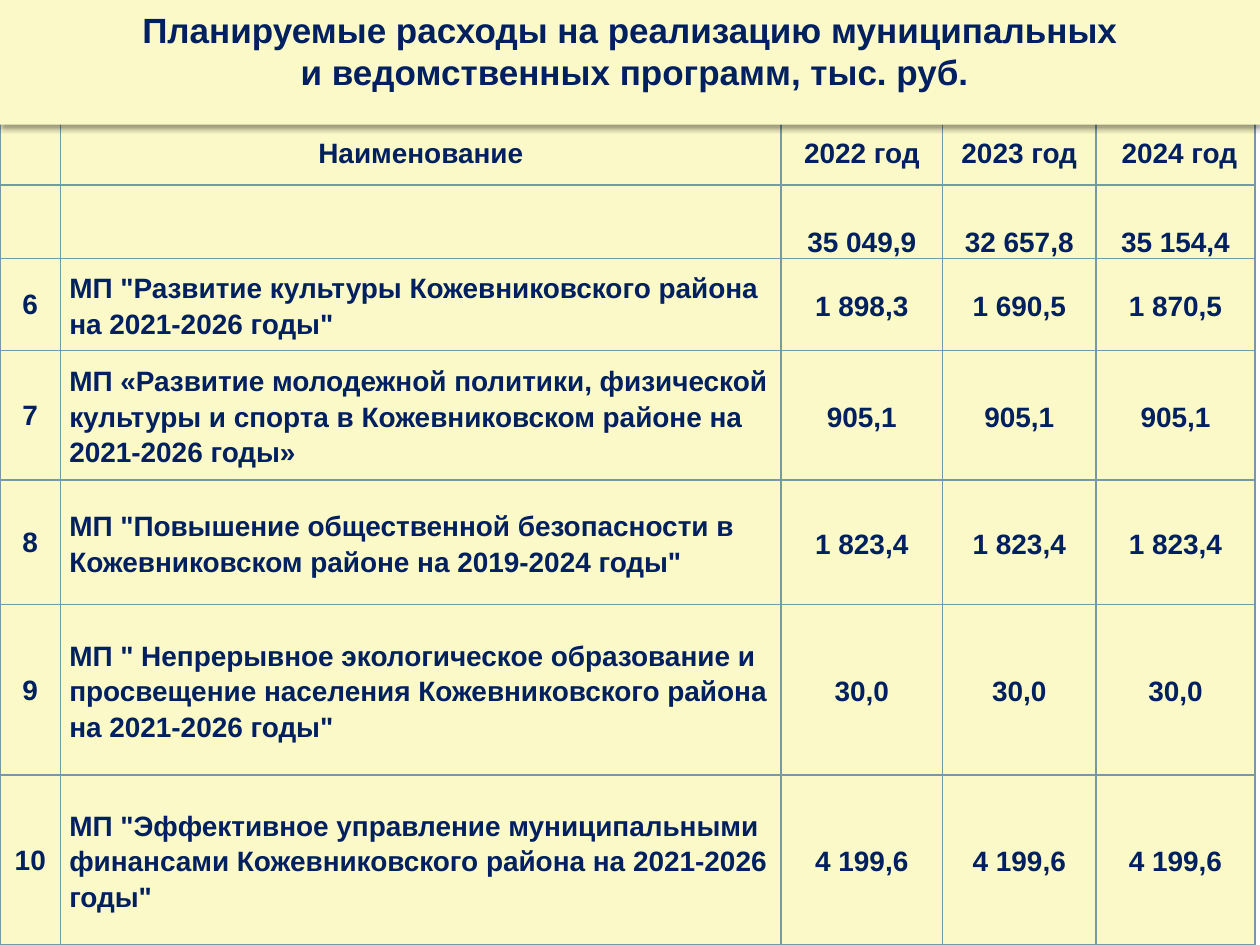
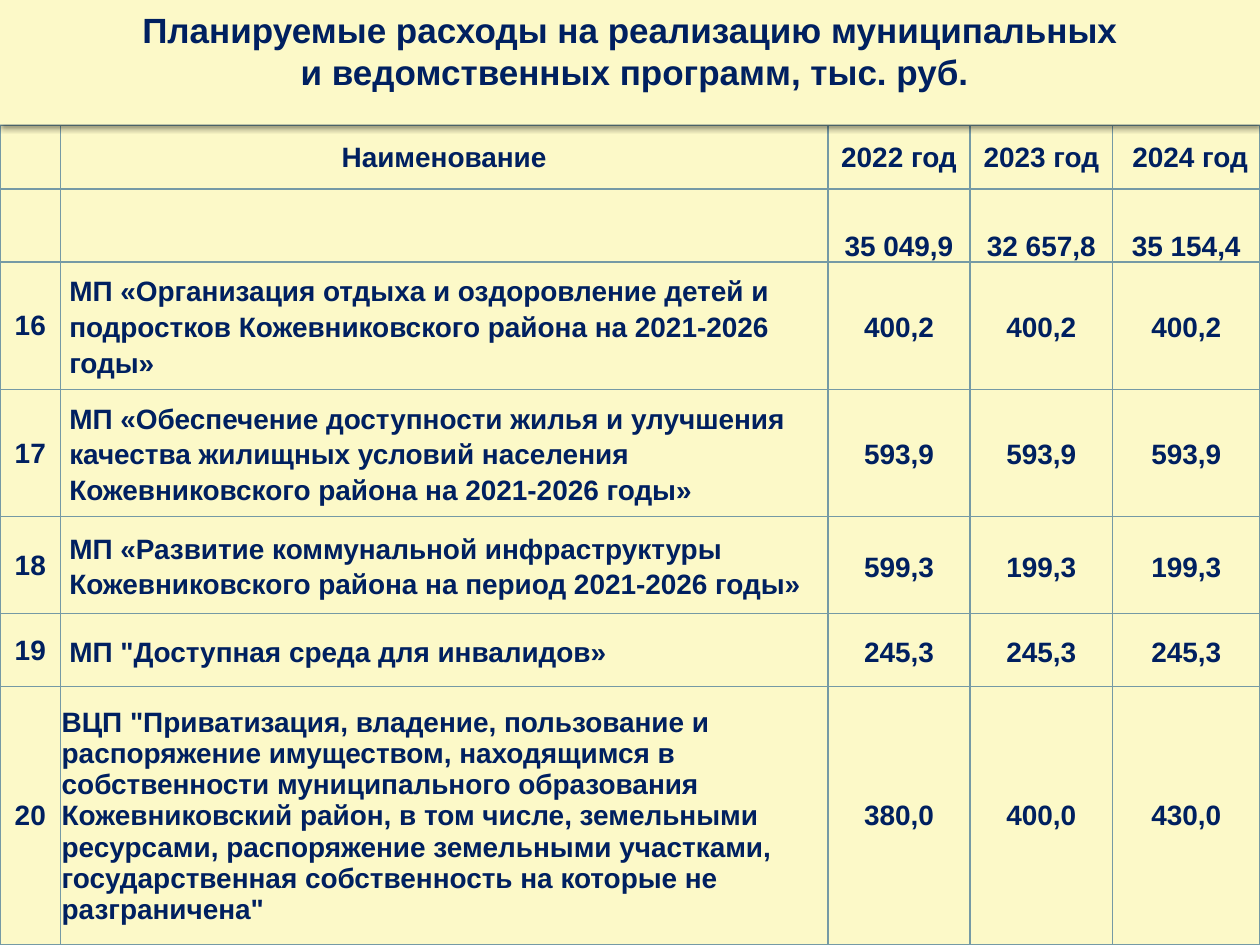
from dataclasses import dataclass

from lxml import etree
from pptx import Presentation
from pptx.dml.color import RGBColor
from pptx.enum.shapes import MSO_SHAPE
from pptx.enum.text import MSO_ANCHOR, PP_ALIGN
from pptx.oxml import parse_xml
from pptx.oxml.ns import nsdecls, qn
from pptx.util import Inches, Pt

RECT = MSO_SHAPE.RECTANGLE
LEFT, CENTER = PP_ALIGN.LEFT, PP_ALIGN.CENTER
TOP, MIDDLE, BOTTOM = MSO_ANCHOR.TOP, MSO_ANCHOR.MIDDLE, MSO_ANCHOR.BOTTOM


@dataclass(frozen=True)
class Theme:
    font: str = "Arial"
    cream: str = "FCF9C8"
    navy: str = "002060"
    border: str = "759AA5"
    title_size: int = 20
    table_size: int = 16
    border_width: int = 1
    line_spacing: float = 1.15


TIGHT = (0.01, 0.01, 0.01, 0)  # cell margins: left, top, right, bottom
ROOMY = (0.07, 0, 0.07, 0)

TITLE = ("Планируемые расходы на реализацию муниципальных\n"
         " и ведомственных программ, тыс. руб.")
HEADER = ("", "Наименование", "2022 год", "2023 год", " 2024 год")
TOTALS = ("", "", "35 049,9", "32 657,8", "35 154,4")


class Deck:
    def __init__(self, theme):
        self.theme = theme
        self.prs = Presentation()
        self.prs.slide_width, self.prs.slide_height = Inches(10), Inches(7.5)
        self.s = None

    def new_slide(self):
        self.s = self.prs.slides.add_slide(self.prs.slide_layouts[6])

    def format_text(self, tf, size, align, spacing=None):
        for p in tf.paragraphs:
            p.alignment = align
            if spacing:
                p.line_spacing = spacing
            for r in p.runs:
                r.font.name = self.theme.font
                r.font.size = Pt(size)
                r.font.bold = True
                r.font.color.rgb = RGBColor.from_string(self.theme.navy)

    def paint(self, fill):
        fill.solid()
        fill.fore_color.rgb = RGBColor.from_string(self.theme.cream)

    def add_shadow(self, sp):
        sp.shadow.inherit = False
        effects = sp.element.spPr.find(qn("a:effectLst"))
        effects.append(parse_xml(
            f'<a:outerShdw {nsdecls("a")} blurRad="{Pt(3.1)}" dist="{Pt(2)}" '
            'dir="5400000" rotWithShape="0"><a:srgbClr val="000000">'
            '<a:alpha val="38000"/></a:srgbClr></a:outerShdw>'))

    def add_title_band(self, text):
        sp = self.s.shapes.add_shape(RECT, 0, 0, Inches(10), Inches(0.99))
        self.paint(sp.fill)
        sp.line.fill.background()
        self.add_shadow(sp)
        tf = sp.text_frame
        tf.word_wrap = True
        tf.vertical_anchor = TOP
        tf.margin_top = Inches(0.07)
        tf.text = text
        self.format_text(tf, self.theme.title_size, CENTER)

    def add_borders(self, cell):
        tc_pr = cell._tc.get_or_add_tcPr()
        for side in ("lnL", "lnR", "lnT", "lnB"):
            ln = etree.SubElement(tc_pr, qn(f"a:{side}"),
                                  w=str(Pt(self.theme.border_width)))
            fill = etree.SubElement(ln, qn("a:solidFill"))
            etree.SubElement(fill, qn("a:srgbClr"), val=self.theme.border)

    def fill_cell(self, cell, text, align, anchor, margins, spacing):
        self.add_borders(cell)
        self.paint(cell.fill)
        (cell.margin_left, cell.margin_top,
         cell.margin_right, cell.margin_bottom) = map(Inches, margins)
        cell.vertical_anchor = anchor
        if text:
            cell.text_frame.text = text
            self.format_text(cell.text_frame, self.theme.table_size, align, spacing)

    def add_budget_table(self, top, widths, heights, programs, compact=()):
        rows = (HEADER, TOTALS, *programs)
        frame = self.s.shapes.add_table(
            len(rows), len(widths), 0, Inches(top),
            Inches(sum(widths)), Inches(sum(heights)))
        table = frame.table
        table.first_row = table.horz_banding = False
        for column, width in zip(table.columns, widths):
            column.width = Inches(width)
        for i, (values, height) in enumerate(zip(rows, heights)):
            table.rows[i].height = Inches(height)
            is_program = i >= 2
            for j, text in enumerate(values):
                roomy = is_program and j > 0 and values[0] not in compact
                self.fill_cell(
                    table.cell(i, j), text,
                    align=LEFT if is_program and j == 1 else CENTER,
                    anchor=BOTTOM if values is TOTALS else MIDDLE,
                    margins=ROOMY if roomy else TIGHT,
                    spacing=self.theme.line_spacing if roomy else None)


def main():
    deck = Deck(Theme())

    # Programs 6-10
    deck.new_slide()
    deck.add_budget_table(
        0.97, (0.48, 5.72, 1.28, 1.22, 1.26),
        (0.5, 0.58, 0.73, 1.03, 0.99, 1.35, 1.35),
        (
            ("6", 'МП "Развитие культуры Кожевниковского района на 2021-2026 годы"',
             "1 898,3", "1 690,5", "1 870,5"),
            ("7", "МП «Развитие молодежной политики, физической культуры и спорта "
                  "в Кожевниковском районе на 2021-2026 годы»",
             "905,1", "905,1", "905,1"),
            ("8", 'МП "Повышение общественной безопасности в Кожевниковском районе '
                  'на 2019-2024 годы"',
             "1 823,4", "1 823,4", "1 823,4"),
            ("9", 'МП " Непрерывное экологическое образование и просвещение населения '
                  'Кожевниковского района на 2021-2026 годы"',
             "30,0", "30,0", "30,0"),
            ("10", 'МП "Эффективное управление муниципальными финансами '
                   'Кожевниковского района на 2021-2026 годы"',
             "4 199,6", "4 199,6", "4 199,6"),
        ))
    deck.add_title_band(TITLE)

    # Programs 16-20
    deck.new_slide()
    deck.add_budget_table(
        0.99, (0.48, 6.09, 1.13, 1.13, 1.17),
        (0.51, 0.58, 1.01, 1.01, 0.77, 0.58, 2.05),
        (
            ("16", "МП «Организация отдыха и оздоровление детей и подростков "
                   "Кожевниковского района на 2021-2026 годы»",
             "400,2", "400,2", "400,2"),
            ("17", "МП «Обеспечение доступности жилья и улучшения качества жилищных "
                   "условий населения Кожевниковского района на 2021-2026 годы»",
             "593,9", "593,9", "593,9"),
            ("18", "МП «Развитие коммунальной инфраструктуры Кожевниковского района "
                   "на период 2021-2026 годы»",
             "599,3", "199,3", "199,3"),
            ("19", 'МП "Доступная среда для инвалидов»',
             "245,3", "245,3", "245,3"),
            ("20", 'ВЦП "Приватизация, владение, пользование и распоряжение имуществом, '
                   "находящимся в собственности муниципального образования "
                   "Кожевниковский район, в том числе, земельными ресурсами, "
                   "распоряжение земельными участками, государственная собственность "
                   'на которые не разграничена"',
             "380,0", "400,0", "430,0"),
        ),
        compact=("20",))
    deck.add_title_band(TITLE)

    deck.prs.save("out.pptx")


if __name__ == "__main__":
    main()
